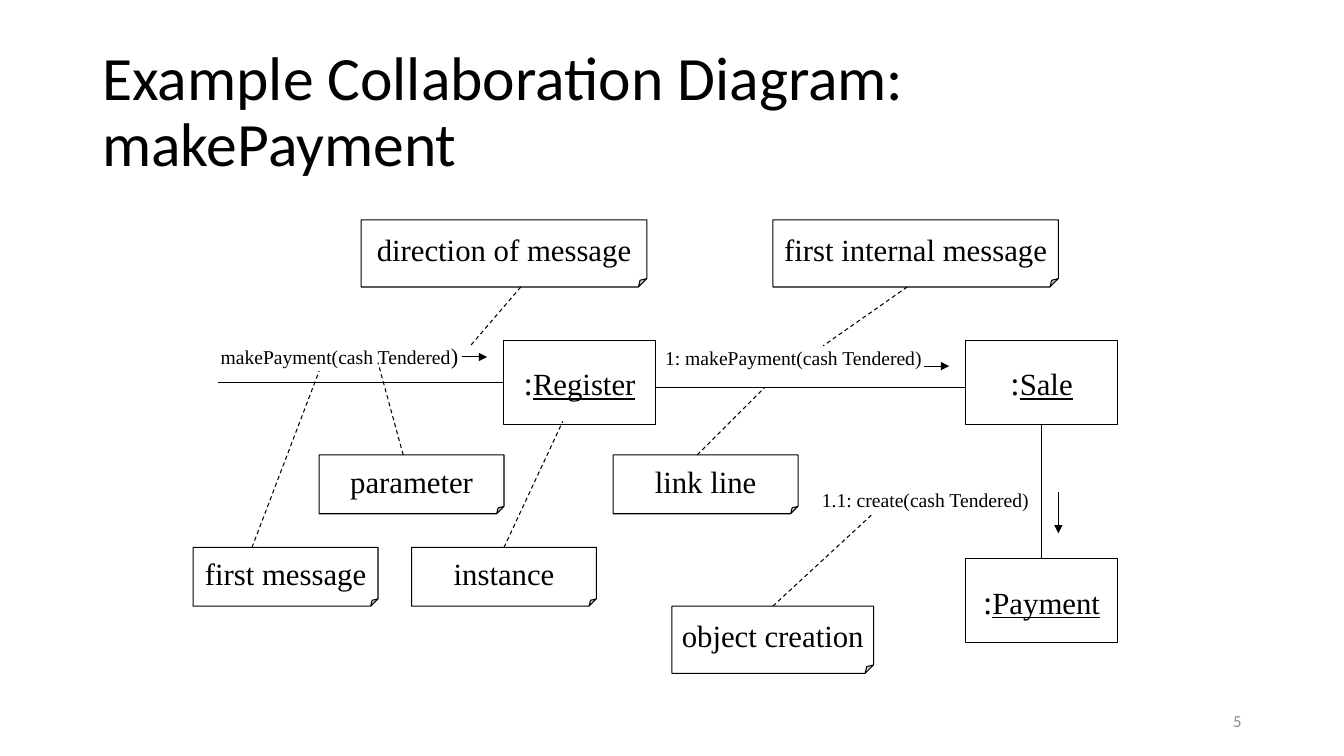
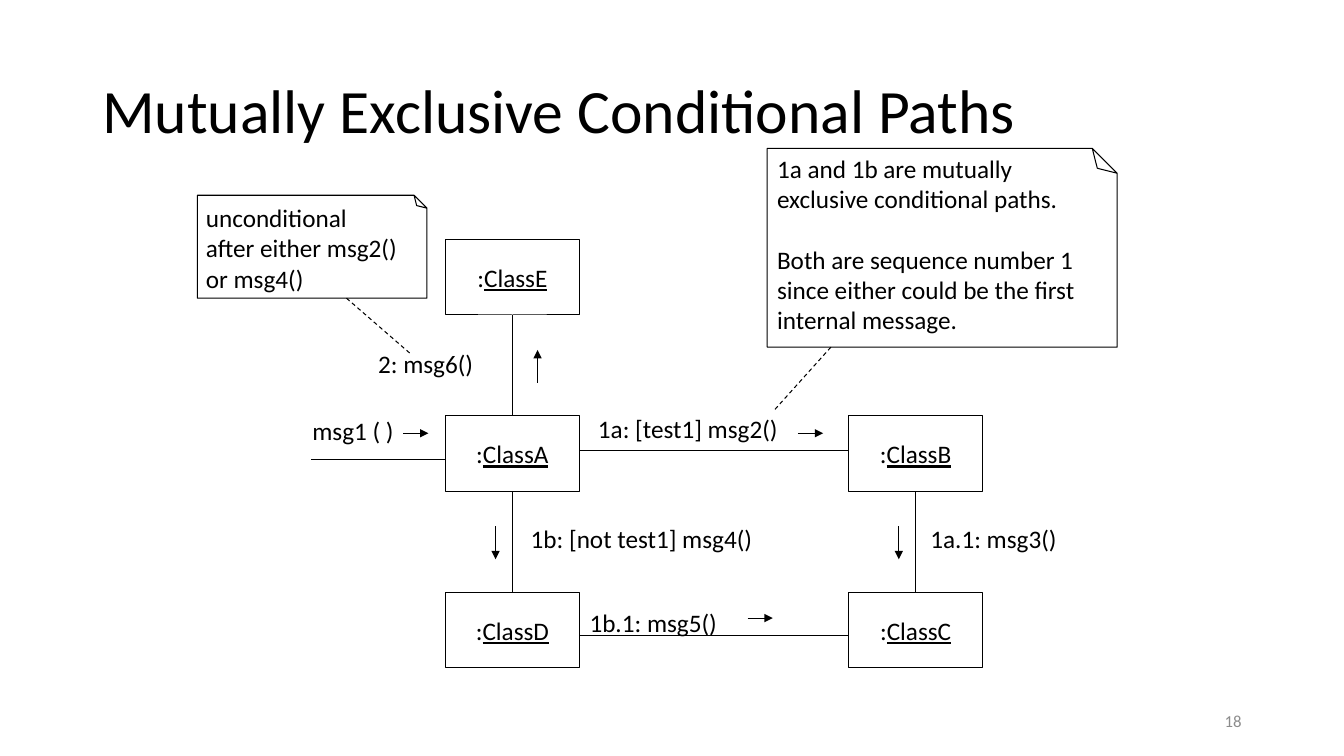
from dataclasses import dataclass
from lxml.etree import SubElement
from pptx import Presentation
from pptx.dml.color import RGBColor
from pptx.enum.dml import MSO_LINE
from pptx.enum.shapes import MSO_CONNECTOR, MSO_SHAPE
from pptx.enum.text import MSO_ANCHOR, MSO_AUTO_SIZE, PP_ALIGN
from pptx.oxml.ns import qn
from pptx.slide import Slide
from pptx.util import Pt

INK, PAPER, FAINT = "000000", "FFFFFF", "8C8C8C"
SANS, SERIF = "Calibri", "Times New Roman"
TOP, LEFT, BOTTOM, RIGHT = range(4)


def color(hex_value):
    return RGBColor.from_string(hex_value)


def add_run(paragraph, text, font, size, ink=INK, underline=None):
    run = paragraph.add_run()
    run.text = text
    run.font.name = font
    run.font.size = Pt(size)
    run.font.color.rgb = color(ink)
    run.font.underline = underline


def outline(line):
    line.color.rgb = color(INK)
    line.width = Pt(0.75)


def frame_text(slide, box, text, size, ink=INK, align=PP_ALIGN.LEFT, spacing=1.0):
    frame = slide.shapes.add_textbox(*map(Pt, box)).text_frame
    frame.word_wrap = True
    frame.vertical_anchor = MSO_ANCHOR.MIDDLE
    paragraph = frame.paragraphs[0]
    paragraph.alignment = align
    paragraph.line_spacing = spacing
    add_run(paragraph, text, SANS, size, ink)


def add_page(deck, title, number):
    slide = deck.slides.add_slide(deck.slide_layouts[6])
    slide.background.fill.solid()
    slide.background.fill.fore_color.rgb = color(PAPER)
    frame_text(slide, (678, 500.5, 216, 28.75), number, 12, FAINT, PP_ALIGN.RIGHT)
    frame_text(slide, (66, 28.75, 828, 104.4), title, 44, spacing=0.9)
    return slide


@dataclass
class Diagram:
    slide: Slide
    left: float
    top: float
    font: str

    def place(self, x, y):
        return Pt(self.left + x), Pt(self.top + y)

    def shape(self, kind, x, y, width, height, filled=True):
        shape = self.slide.shapes.add_shape(
            kind, *self.place(x, y), Pt(width), Pt(height))
        shape.shadow.inherit = False
        if filled:
            shape.fill.solid()
            shape.fill.fore_color.rgb = color(PAPER)
        else:
            shape.fill.background()
        outline(shape.line)
        return shape

    def folded(self, x, y, width, height, filled=True):
        note = self.shape(MSO_SHAPE.FOLDED_CORNER, x, y, width, height, filled)
        geometry = note._element.spPr.find(qn("a:prstGeom"))
        guides = geometry.find(qn("a:avLst"))
        if guides is None:
            guides = SubElement(geometry, qn("a:avLst"))
        for guide in list(guides):
            guides.remove(guide)
        SubElement(guides, qn("a:gd"), name="adj", fmla="val 12500")
        return note

    def centered(self, shape):
        frame = shape.text_frame
        frame.word_wrap = False
        frame.vertical_anchor = MSO_ANCHOR.MIDDLE
        frame.paragraphs[0].alignment = PP_ALIGN.CENTER
        return frame.paragraphs[0]

    def instance(self, name, x, y, width, height, colon_size, name_size):
        box = self.shape(MSO_SHAPE.RECTANGLE, x, y, width, height)
        paragraph = self.centered(box)
        add_run(paragraph, ":", self.font, colon_size)
        add_run(paragraph, name, self.font, name_size, underline=True)
        return box

    def note(self, text, x, y, width, height):
        note = self.folded(x, y, width, height)
        add_run(self.centered(note), text, self.font, 22)
        return note

    def flipped_note(self, x, y, width, height):
        note = self.folded(x, y, width, height, False)
        note._element.spPr.find(qn("a:xfrm")).set("flipV", "1")

    def label(self, blocks, x, y, width, height):
        frame = self.slide.shapes.add_textbox(
            *self.place(x, y), Pt(width), Pt(height)).text_frame
        frame.word_wrap = False
        frame.auto_size = MSO_AUTO_SIZE.SHAPE_TO_FIT_TEXT
        for index, (runs, gap) in enumerate(blocks):
            paragraph = frame.add_paragraph() if index else frame.paragraphs[0]
            if gap:
                paragraph.space_before = Pt(gap)
            for text, size in runs:
                add_run(paragraph, text, self.font, size)

    def message(self, text, size, x, y, width, height):
        self.label([([(text, size)], 0)], x, y, width, height)

    def line(self, x1, y1, x2, y2, begin=None, end=None):
        line = self.slide.shapes.add_connector(
            MSO_CONNECTOR.STRAIGHT, *self.place(x1, y1), *self.place(x2, y2))
        outline(line.line)
        if begin:
            line.begin_connect(*begin)
        if end:
            line.end_connect(*end)
        SubElement(line._element.spPr, qn("a:effectLst"))
        return line

    def pointer(self, *points, begin=None):
        self.line(*points, begin=begin).line.dash_style = MSO_LINE.DASH

    def arrow(self, *points):
        ln = self.line(*points)._element.spPr.find(qn("a:ln"))
        SubElement(ln, qn("a:tailEnd"), type="triangle")


def payment_diagram(slide, left, top):
    diagram = Diagram(slide, left, top, SERIF)
    register, sale, payment = [
        diagram.instance(name, x, y, 108, 60, 24, 22)
        for name, x, y in (("Register", 222, 86), ("Sale", 552, 86),
                           ("Payment", 552, 242))]
    diagram.line(606, 146, 606, 242, (sale, BOTTOM), (payment, TOP))
    diagram.line(222, 116, 18, 116, (register, LEFT))
    diagram.line(330, 119.5, 552, 119.5)

    diagram.label([([("makePayment(cash Tendered", 14), (")", 16)], 0)],
                  12.5, 83.5, 185, 27)
    diagram.message("1: makePayment(cash Tendered)", 14, 330, 86.5, 199, 24)
    diagram.message("1.1: create(cash Tendered)", 14, 442, 188, 163.5, 24)
    for points in ((192, 98, 210, 98), (522, 104.5, 540, 104.5),
                   (618, 194.5, 618, 224)):
        diagram.arrow(*points)

    for text, x, y in (("first message", 0, 234), ("link line", 300, 168),
                       ("parameter", 90, 168)):
        diagram.note(text, x, y, 132, 42)
    instance_note = diagram.note("instance", 156, 234, 132, 42)
    creation_note = diagram.note("object creation", 342, 276, 144, 48)
    diagram.note("first internal message", 414, 0, 204, 48)
    diagram.note("direction of message", 120, 0, 204, 48)

    for points in ((234, 48, 198, 90), (510, 48, 450, 90), (42, 234, 90, 108),
                   (360, 168, 408, 120), (150, 168, 132, 102)):
        diagram.pointer(*points)
    diagram.pointer(222, 234, 264, 144, begin=(instance_note, TOP))
    diagram.pointer(414, 276, 486, 209.5, begin=(creation_note, TOP))


def conditional_diagram(slide, left, top):
    diagram = Diagram(slide, left, top, SANS)
    width, height = 96, 54
    first_x, first_y, column_step, row_step = 178, 65, 288, 126
    cells = {"ClassA": (0, 1), "ClassB": (1, 1), "ClassD": (0, 2),
             "ClassC": (1, 2), "ClassE": (0, 0)}
    classes = {
        name: diagram.instance(name, first_x + column * column_step,
                               first_y + row * row_step, width, height, 18, 18)
        for name, (column, row) in cells.items()}
    for upper, lower in (("ClassE", "ClassA"), ("ClassA", "ClassD"),
                         ("ClassB", "ClassC")):
        diagram.line(0, 0, 0, 0, (classes[upper], BOTTOM), (classes[lower], TOP))
    for points in ((178, 222, 82, 222), (274, 216, 466, 216),
                   (274, 348, 466, 348)):
        diagram.line(*points)

    for text, x, y, text_width in (
            ("msg1 ( )", 76, 187, 73.5), ("1a: [test1] msg2()", 280, 186, 145),
            ("1b: [not test1] msg4()", 232, 264, 175),
            ("1b.1: msg5()", 274, 324, 106.5),
            ("1a.1: msg3()", 517.5, 264, 106), ("2: msg6()", 123, 139.5, 83.5)):
        diagram.message(text, 18, x, y, text_width, 29)
    for points in ((148, 203.5, 166, 203.5), (394, 335.5, 412, 335.5),
                   (430, 203.5, 448, 203.5), (214, 270, 214, 293.5),
                   (502, 270, 502, 293.5), (244, 167.5, 244, 144)):
        diagram.arrow(*points)
    diagram.pointer(453.5, 142, 413.5, 186.5)
    diagram.pointer(107.5, 107, 153, 146.5)

    diagram.flipped_note(1, 33.5, 164, 73.5)
    diagram.label([([(text, 18)], 0) for text in (
        "unconditional", "after either msg2()", "or msg4()")], 0, 35, 153, 73)
    diagram.flipped_note(408, 0, 250, 142)
    diagram.label([([(text, 18)], gap) for text, gap in (
        ("1a and 1b are mutually", 0), ("exclusive conditional paths.", 0),
        ("Both are sequence number 1", 21.6),
        ("since either could be the first", 0),
        ("internal message.", 0))], 408, 0, 230, 138)


def main():
    deck = Presentation()
    deck.slide_width, deck.slide_height = Pt(960), Pt(540)
    payment_diagram(
        add_page(deck, "Example Collaboration Diagram: makePayment", "5"), 138, 157)
    conditional_diagram(
        add_page(deck, "Mutually Exclusive Conditional Paths", "18"), 140, 106)
    deck.save("out.pptx")


if __name__ == "__main__":
    main()
